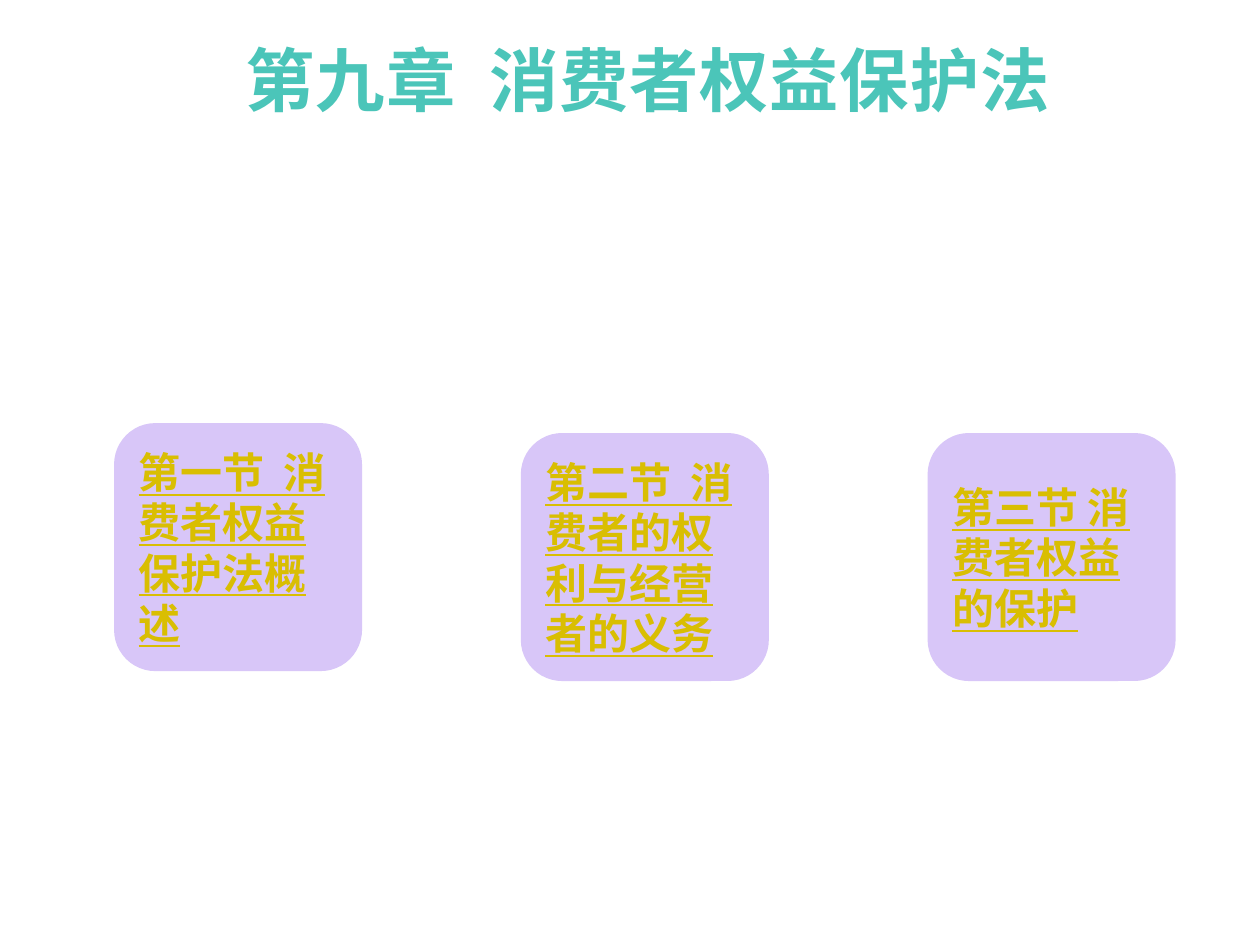
from pptx import Presentation
from pptx.dml.color import RGBColor
from pptx.enum import shapes, text
from pptx.util import Cm, Pt

TEAL = RGBColor(0x4B, 0xC5, 0xB9)
LILAC = RGBColor(0xD8, 0xC6, 0xF8)
GOLD = RGBColor(0xD9, 0xBE, 0x02)

CARD_SIZE = 5
CARD_LEFT = 2.3
CARD_STEP = 8.2
SECTIONS = [
    ("第一节  消费者权益保护法概述", 8.53),
    ("第二节  消费者的权利与经营者的义务", 8.73),
    ("第三节 消费者权益的保护", 8.73),
]


def write_text(frame, wording, *, font, size, color, underline=False,
               spacing=None, anchor=text.MSO_ANCHOR.MIDDLE):
    frame.word_wrap = True
    frame.auto_size = text.MSO_AUTO_SIZE.NONE
    frame.vertical_anchor = anchor
    paragraph = frame.paragraphs[0]
    paragraph.alignment = text.PP_ALIGN.LEFT
    run = paragraph.add_run()
    run.text = wording
    run.font.name = font
    run.font.size = Pt(size)
    run.font.bold = True
    run.font.underline = underline
    run.font.color.rgb = color
    if spacing is not None:
        run.font._element.set("spc", str(int(spacing * 100)))


def add_chapter_title(slide, wording):
    title = slide.shapes.title
    title.left, title.top = Cm(4.7), Cm(0.74)
    title.width, title.height = Cm(18.16), Cm(3.23)
    title.text_frame.margin_top = 0
    write_text(title.text_frame, wording, font="Lato", size=39.6, color=TEAL,
               spacing=0.5, anchor=text.MSO_ANCHOR.TOP)


def add_section_card(slide, wording, left, top):
    card = slide.shapes.add_shape(
        shapes.MSO_SHAPE.ROUNDED_RECTANGLE,
        Cm(left), Cm(top), Cm(CARD_SIZE), Cm(CARD_SIZE))
    card.shadow.inherit = False
    card.fill.solid()
    card.fill.fore_color.rgb = LILAC
    card.line.fill.background()
    write_text(card.text_frame, wording, font="Times New Roman", size=24,
               color=GOLD, underline=True)


def main():
    deck = Presentation()
    deck.slide_width, deck.slide_height = Cm(25.4), Cm(19.05)
    slide = deck.slides.add_slide(deck.slide_layouts[5])
    add_chapter_title(slide, "第九章  消费者权益保护法")
    for column, (wording, top) in enumerate(SECTIONS):
        add_section_card(slide, wording, CARD_LEFT + column * CARD_STEP, top)
    deck.save("out.pptx")


if __name__ == "__main__":
    main()
